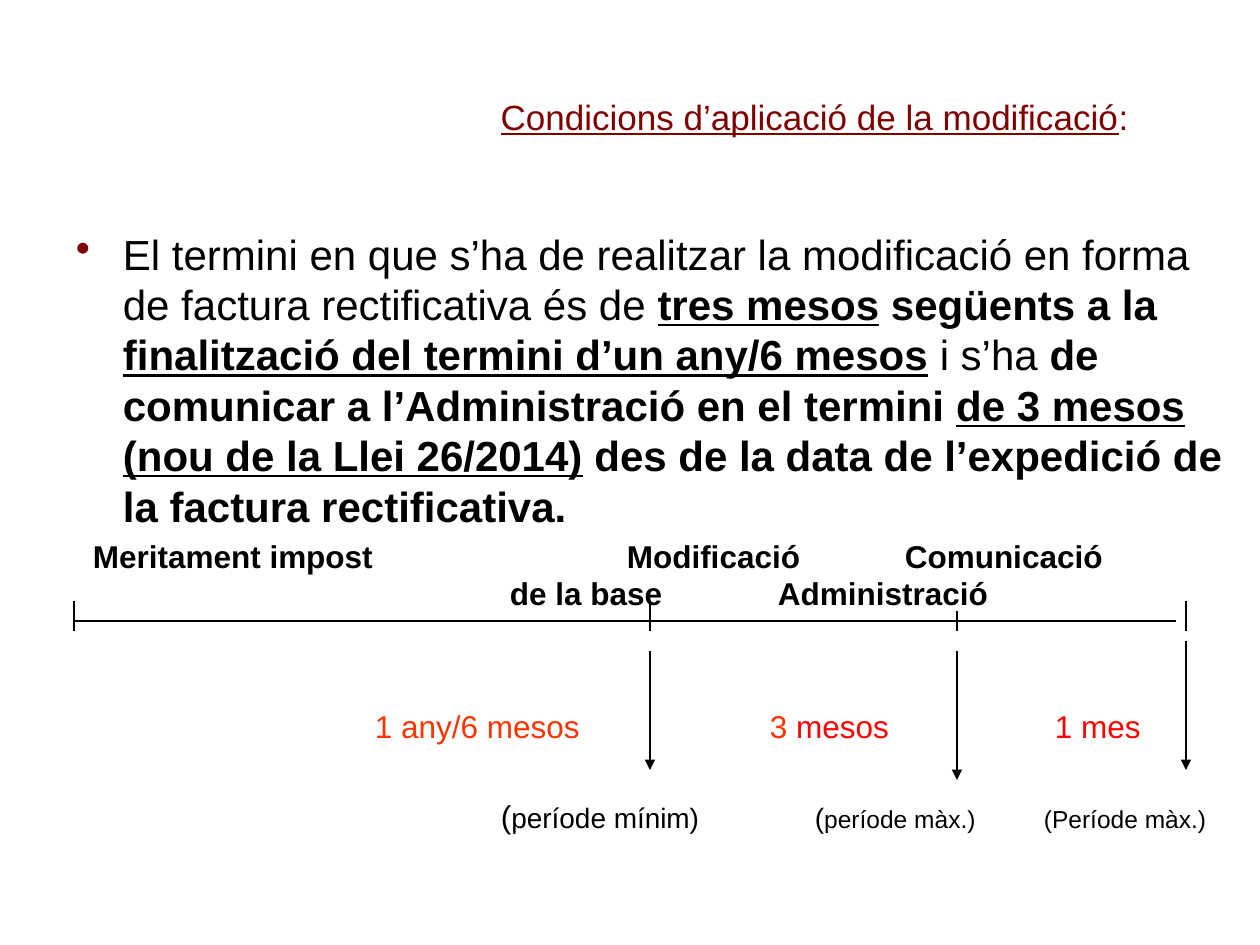
import pptx
import pptx.dml.color
import pptx.enum.shapes
import pptx.enum.text
import pptx.oxml
import pptx.oxml.ns
import pptx.util

PX = 7257  # EMU per px, 126 px to the inch
FONT = "Arial"
BLACK, MAROON, ORANGE, RED = "000000", "800000", "FF3300", "FF0000"
BODY_LEFT, INSET = 63, 13


def px(length):
    return pptx.util.Emu(length * PX)


def color(hex_code):
    return pptx.dml.color.RGBColor.from_string(hex_code)


def add_xml(parent, xml):
    namespace = pptx.oxml.ns.nsdecls("a")
    parent.append(pptx.oxml.parse_xml(xml.replace(">", f" {namespace}>", 1)
                                      if "/>" not in xml.split(">")[0] + ">"
                                      else xml.replace("/>", f" {namespace}/>", 1)))


def add_text_frame(slide, left, top, width, height):
    frame = slide.shapes.add_textbox(px(left), px(top), px(width), px(height)).text_frame
    frame.word_wrap = True
    frame.margin_left, frame.margin_right = px(INSET), px(0)
    frame.margin_top = frame.margin_bottom = px(6)
    return frame


def style_font(paragraph, size=None, hex_code=None, bold=None):
    font = paragraph.font
    font.name = FONT
    if size:
        font.size = pptx.util.Pt(size)
    if hex_code:
        font.color.rgb = color(hex_code)
    if bold is not None:
        font.bold = bold


def add_run(paragraph, text, size=None, hex_code=None, bold=None, underline=None):
    run = paragraph.add_run()
    run.text = text
    if size:
        run.font.size = pptx.util.Pt(size)
    if hex_code:
        run.font.color.rgb = color(hex_code)
    if bold is not None:
        run.font.bold = bold
    if underline is not None:
        run.font.underline = underline


def add_bullet(paragraph, indent):
    properties = paragraph._p.get_or_add_pPr()
    properties.set("marL", str(px(indent)))
    properties.set("indent", str(-px(indent)))
    add_xml(properties, f'<a:buClr><a:srgbClr val="{MAROON}"/></a:buClr>')
    add_xml(properties, '<a:buChar char="•"/>')


def add_tabbed_row(frame, stops, space_before):
    """Add a row whose labels start at the given slide positions."""
    row = frame.add_paragraph()
    row.line_spacing = pptx.util.Pt(21.2)
    row.space_before = pptx.util.Pt(space_before)
    tabs = "".join(f'<a:tab pos="{px(stop - BODY_LEFT - INSET)}" algn="l"/>' for stop in stops)
    add_xml(row._p.get_or_add_pPr(), f"<a:tabLst>{tabs}</a:tabLst>")
    return row


def add_line(slide, x1, y1, x2, y2, arrow=False):
    line = slide.shapes.add_connector(pptx.enum.shapes.MSO_CONNECTOR.STRAIGHT,
                                      px(x1), px(y1), px(x2), px(y2))
    line.line.color.rgb = color(BLACK)
    line.line.width = pptx.util.Pt(0.75)
    if arrow:
        add_xml(line.line._get_or_add_ln(), '<a:tailEnd type="triangle"/>')
    add_xml(line._element.spPr, "<a:effectLst/>")


def add_title(slide):
    frame = add_text_frame(slide, 432, 38, 765, 156)
    frame.margin_right = px(INSET)
    frame.vertical_anchor = pptx.enum.text.MSO_ANCHOR.MIDDLE
    title = frame.paragraphs[0]
    title.alignment = pptx.enum.text.PP_ALIGN.CENTER
    style_font(title, 20, MAROON)
    add_run(title, "Condicions d’aplicació de la modificació", underline=True)
    add_run(title, ":")


def add_deadline_text(frame):
    deadline = frame.paragraphs[0]
    deadline.line_spacing = pptx.util.Pt(28.8)
    add_bullet(deadline, 47)
    style_font(deadline, 24, BLACK)
    for text, bold, underline in (
        ("El termini en que s’ha de realitzar la modificació en forma "
         "de factura rectificativa és de ", False, False),
        ("tres mesos", True, True),
        (" següents a la ", True, False),
        ("finalització del termini d’un any/6 mesos", True, True),
        (" i s’ha", False, False),
        (" de comunicar a l’Administració en el termini ", True, False),
        ("de 3 mesos (nou de la Llei 26/2014)", True, True),
        (" des de la data de l’expedició de la factura rectificativa.", True, False),
    ):
        add_run(deadline, text, bold=bold, underline=underline)


def add_timeline_labels(frame):
    # Milestones
    for stops, text, space in (
        ((93, 627, 905), "\tMeritament impost\tModificació\tComunicació", 4),
        ((510, 778), "\tde la base\tAdministració", 0),
    ):
        milestones = add_tabbed_row(frame, stops, space)
        style_font(milestones, 18, BLACK, True)
        add_run(milestones, text)

    # Durations
    durations = add_tabbed_row(frame, (375, 770, 1055), 55)
    style_font(durations, 18)
    add_run(durations, "\t1 any/6 mesos\t3 ", hex_code=ORANGE)
    add_run(durations, "mesos\t1 mes", hex_code=RED)

    # Kind of period
    periods = add_tabbed_row(frame, (501, 815, 1044), 30)
    style_font(periods, hex_code=BLACK)
    for text, size in (("\t(", 18), ("període mínim)\t(", 16),
                       ("període màx.)\t(Període màx.)", 14)):
        add_run(periods, text, size)


def add_timeline(slide):
    add_line(slide, 74, 621, 1176, 621)
    for x, top in ((74, 601), (650, 601), (957, 611), (1186, 601)):
        add_line(slide, x, top, x, 631)
    for x, top, bottom in ((650, 651, 770), (957, 651, 780), (1186, 641, 770)):
        add_line(slide, x, top, x, bottom, arrow=True)


def main():
    deck = pptx.Presentation()
    deck.slide_width, deck.slide_height = pptx.util.Inches(10), pptx.util.Inches(7.5)
    slide = deck.slides.add_slide(deck.slide_layouts[6])
    add_title(slide)
    body = add_text_frame(slide, BODY_LEFT, 222, 1172, 639)
    add_deadline_text(body)
    add_timeline_labels(body)
    add_timeline(slide)
    deck.save("out.pptx")


if __name__ == "__main__":
    main()
